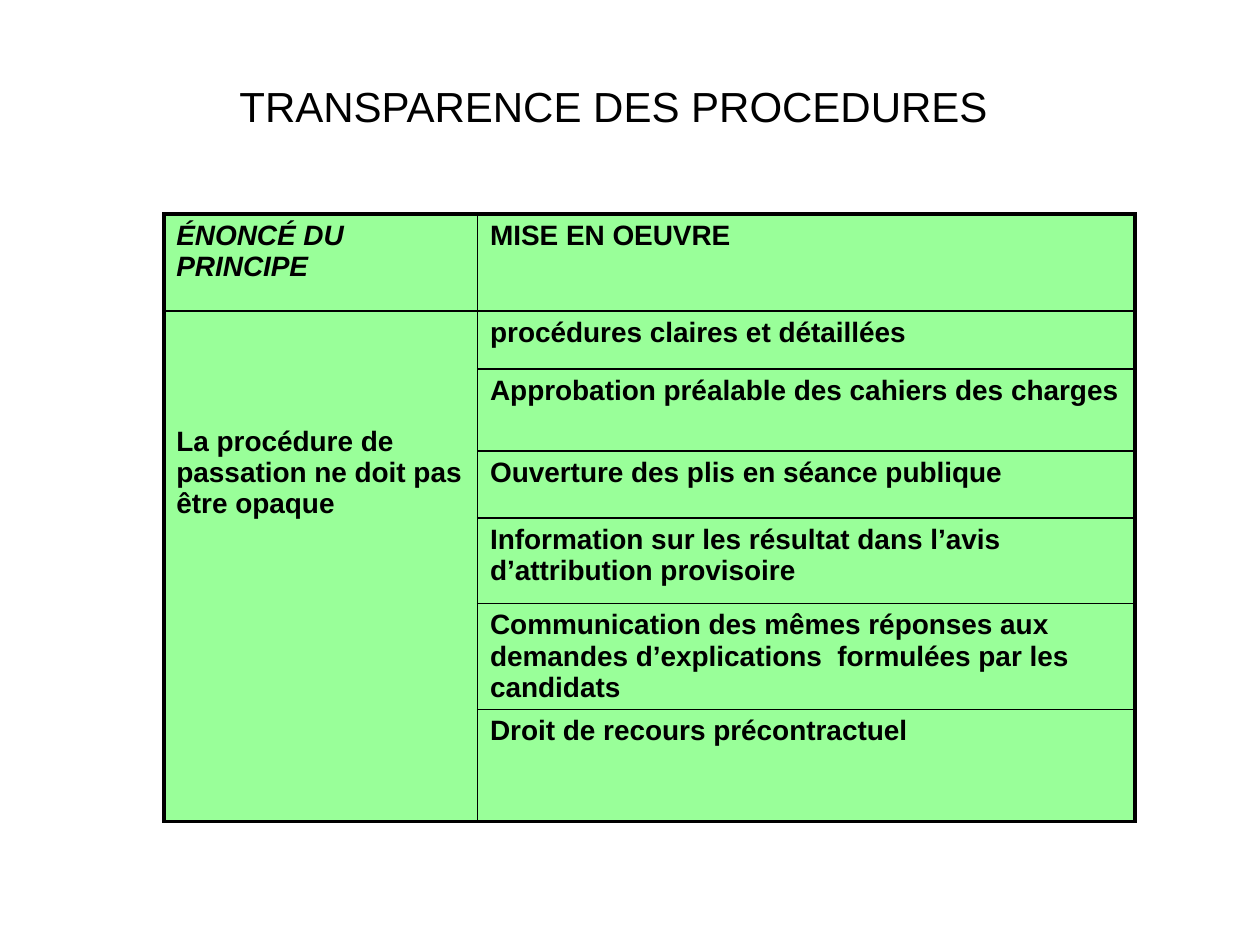
"""Build the slide on transparency of procurement procedures."""
from pptx import Presentation
from pptx.dml.color import RGBColor
from pptx.enum.text import MSO_ANCHOR, PP_ALIGN
from pptx.oxml import parse_xml
from pptx.oxml.ns import nsdecls
from pptx.util import Inches, Pt

BLACK = RGBColor(0x00, 0x00, 0x00)
GREEN = RGBColor(0x99, 0xFF, 0x99)
THIN, THICK = Pt(1), Pt(2.25)
MEASURES = [
    "MISE EN OEUVRE",
    "procédures claires et détaillées",
    "Approbation préalable des cahiers des charges",
    "Ouverture des plis en séance publique",
    "Information sur les résultat dans l’avis d’attribution provisoire",
    "Communication des mêmes réponses aux demandes d’explications  formulées par les candidats",
    "Droit de recours précontractuel",
]
PRINCIPLES = ["ÉNONCÉ DU PRINCIPE", "La procédure de passation ne doit pas être opaque"]
COLUMN_WIDTHS = [2.49, 5.22]
ROW_HEIGHTS = [0.77, 0.46, 0.65, 0.53, 0.68, 0.84, 0.89]


def write_text(frame, text, size=16, bold=True, italic=False):
    paragraph = frame.paragraphs[0]
    paragraph.alignment = PP_ALIGN.LEFT
    run = paragraph.add_run()
    run.text = text
    run.font.name = "Arial"
    run.font.size = Pt(size)
    run.font.bold = bold
    run.font.italic = italic
    run.font.color.rgb = BLACK


def set_borders(cell, **widths):
    properties = cell._tc.get_or_add_tcPr()
    for index, (side, width) in enumerate(widths.items()):
        border = parse_xml(
            f'<a:ln{side} {nsdecls("a")} w="{width}"><a:solidFill>'
            f'<a:srgbClr val="{BLACK}"/></a:solidFill></a:ln{side}>'
        )
        properties.insert(index, border)


presentation = Presentation()
presentation.slide_width = Inches(10)
presentation.slide_height = Inches(7.5)
slide = presentation.slides.add_slide(presentation.slide_layouts[5])

title = slide.shapes.title
title.left, title.top = Inches(0.98), Inches(0.36)
title.width, title.height = Inches(8.82), Inches(0.75)
title_frame = title.text_frame
title_frame.vertical_anchor = MSO_ANCHOR.BOTTOM
title_frame.margin_left = Inches(0.92)
title_frame.margin_bottom = Inches(0.07)
write_text(title_frame, "TRANSPARENCE DES PROCEDURES", size=24, bold=False)

row_count, column_count = len(ROW_HEIGHTS), len(COLUMN_WIDTHS)
table = slide.shapes.add_table(
    row_count, column_count, Inches(1.3), Inches(1.7),
    Inches(sum(COLUMN_WIDTHS)), Inches(sum(ROW_HEIGHTS)),
).table
table.first_row = False
table.horz_banding = False
for column, width in zip(table.columns, COLUMN_WIDTHS):
    column.width = Inches(width)

for row_index, height in enumerate(ROW_HEIGHTS):
    table.rows[row_index].height = Inches(height)
    for column_index in range(column_count):
        cell = table.cell(row_index, column_index)
        cell.fill.solid()
        cell.fill.fore_color.rgb = GREEN
        last_row = row_index == row_count - 1 or (row_index == 1 and column_index == 0)
        set_borders(
            cell,
            L=THICK if column_index == 0 else THIN,
            R=THICK if column_index == column_count - 1 else THIN,
            T=THICK if row_index == 0 else THIN,
            B=THICK if last_row else THIN,
        )

principle_cell = table.cell(1, 0)
principle_cell.merge(table.cell(row_count - 1, 0))
principle_cell.margin_top = Inches(0.91)
for row_index, text in enumerate(PRINCIPLES):
    write_text(table.cell(row_index, 0).text_frame, text, italic=row_index == 0)
for row_index, text in enumerate(MEASURES):
    write_text(table.cell(row_index, 1).text_frame, text)

presentation.save("out.pptx")
